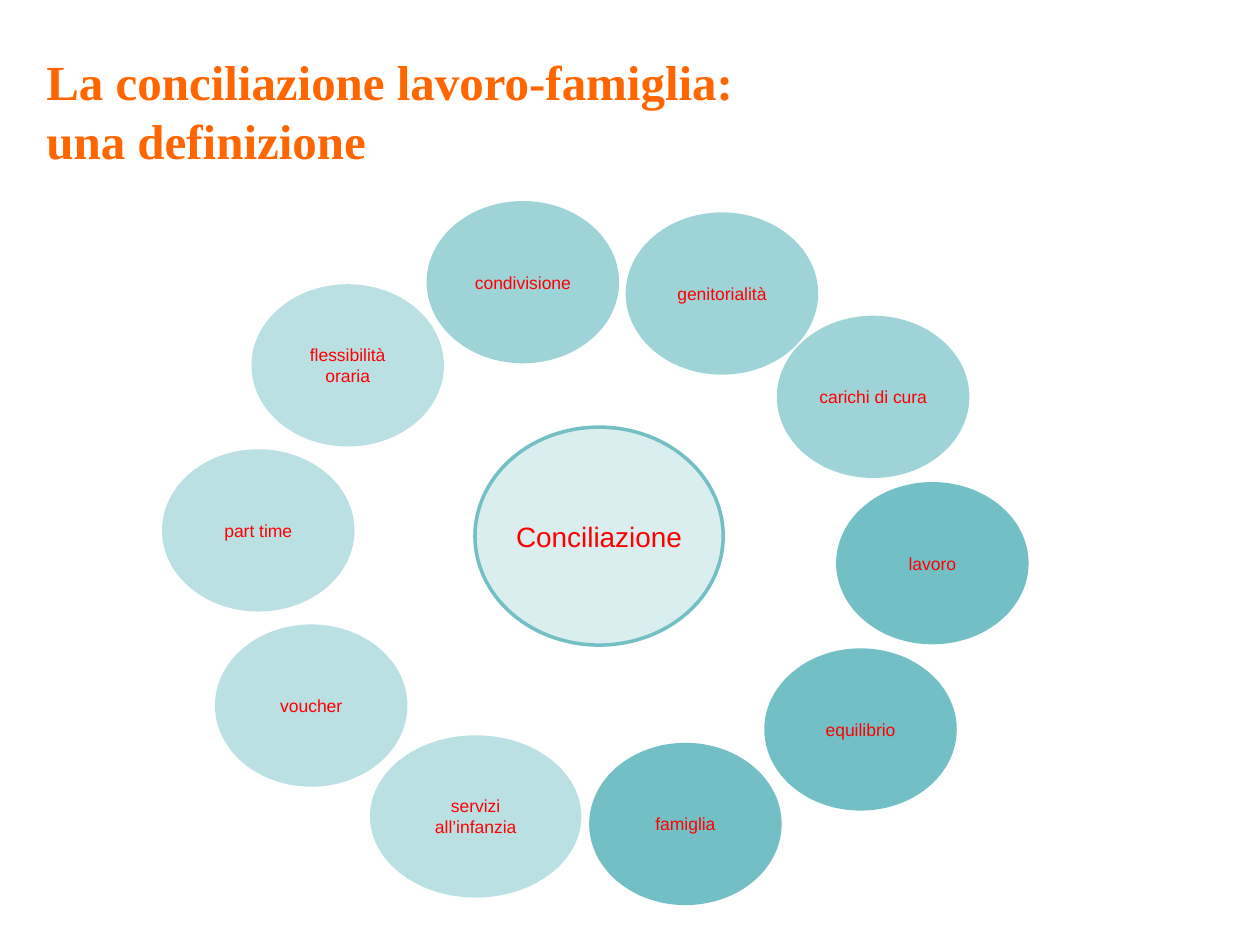
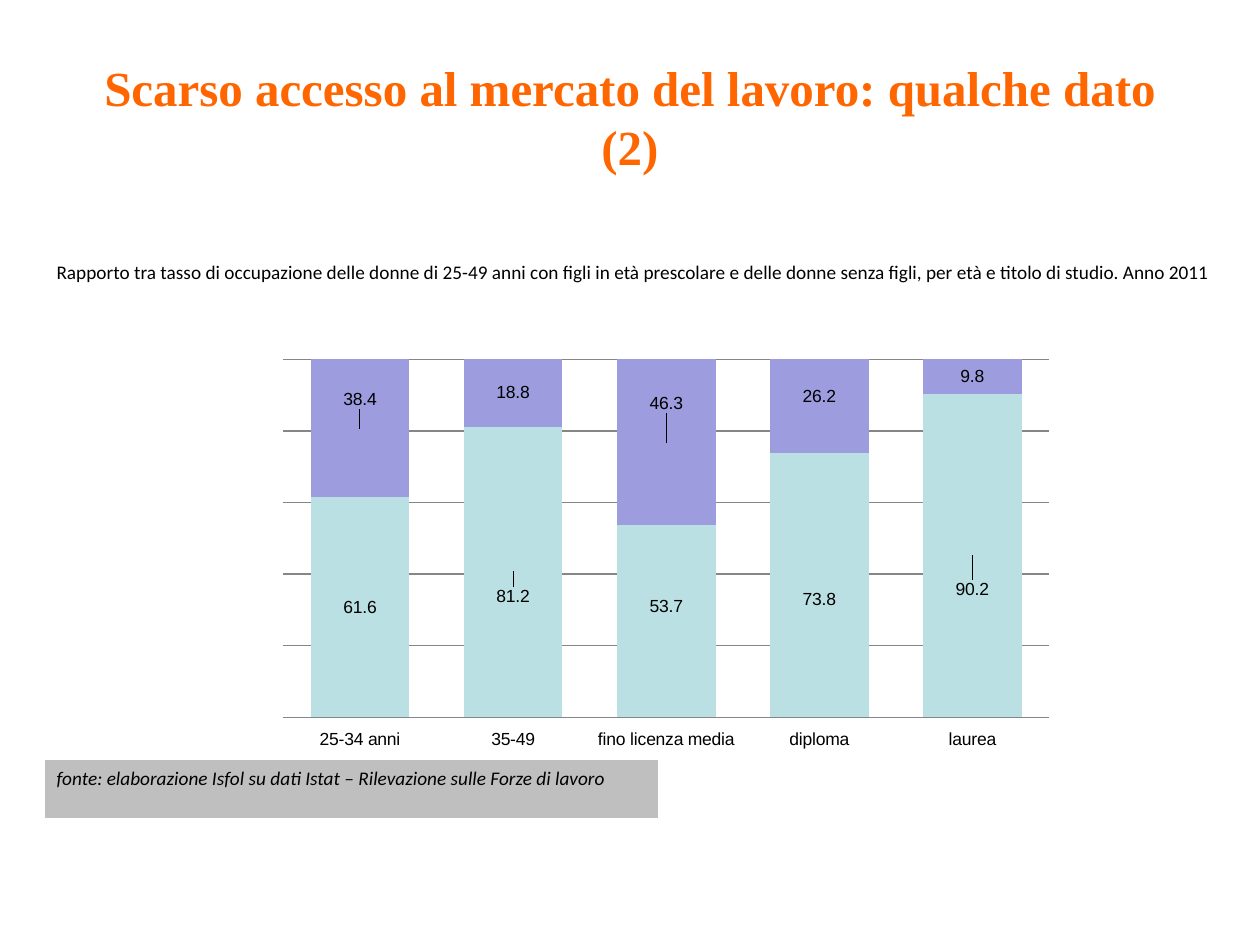
from lxml.etree import SubElement
from pptx import Presentation
from pptx.chart.data import CategoryChartData
from pptx.dml.color import RGBColor
from pptx.enum.chart import XL_CHART_TYPE, XL_LABEL_POSITION, XL_TICK_LABEL_POSITION, XL_TICK_MARK
from pptx.enum.shapes import MSO_SHAPE
from pptx.enum.text import MSO_ANCHOR, PP_ALIGN
from pptx.oxml.ns import qn
from pptx.util import Inches, Pt

ORANGE, RED, BLACK, WHITE = "FF6600", "FF0000", "000000", "FFFFFF"
PALE, LIGHT, MID, TEAL = "DAEDEF", "BBE0E3", "9ED3D7", "72BFC5"
LILAC, GRAY, GRID = "9C9CDF", "BFBFBF", "868686"

BUBBLES = {
    MID: [("condivisione", 3.4, 1.61), ("genitorialità", 4.98, 1.7),
          ("carichi di cura", 6.18, 2.52)],
    TEAL: [("lavoro", 6.65, 3.84), ("equilibrio", 6.08, 5.16),
           ("famiglia", 4.69, 5.91)],
    LIGHT: [("servizi\nall’infanzia", 2.95, 5.85, 1.65), ("voucher", 1.72, 4.97),
            ("part time", 1.3, 3.58), ("flessibilità\noraria", 2.01, 2.27)],
}
GROUPS = ["25-34 anni", "35-49", "fino licenza media", "diploma", "laurea"]
RATES = [
    ("Series 1", LIGHT, [61.6, 81.2, 53.7, 73.8, 90.2], {1: 0.05, 2: -0.03, 3: 0.03, 4: 0.07}),
    ("Series 2", LILAC, [38.4, 18.8, 46.3, 26.2, 9.8], {0: -0.06, 2: -0.08, 3: -0.02}),
]


def color(code):
    return RGBColor.from_string(code)


def paint(fill, code):
    fill.solid()
    fill.fore_color.rgb = color(code)


def style(font, name, size, code, bold=False, italic=False):
    font.name, font.size = name, Pt(size)
    font.bold, font.italic = bold, italic
    font.color.rgb = color(code)


def write(frame, text, name, size, code, align=PP_ALIGN.LEFT, anchor=MSO_ANCHOR.MIDDLE,
          wrap=True, **look):
    frame.word_wrap = wrap
    frame.vertical_anchor = anchor
    for i, line in enumerate(text.split("\n")):
        para = frame.add_paragraph() if i else frame.paragraphs[0]
        para.alignment = align
        run = para.add_run()
        run.text = line
        style(run.font, name, size, code, **look)


def add_text(slide, box, text, *font, **look):
    frame = slide.shapes.add_textbox(*map(Inches, box)).text_frame
    write(frame, text, *font, **look)


def add_title(slide, box, text, align=PP_ALIGN.LEFT):
    add_text(slide, box, text, "Times New Roman", 28, ORANGE, align=align, bold=True)


def add_form(slide, kind, box, fill, line, width):
    form = slide.shapes.add_shape(kind, *map(Inches, box))
    form.shadow.inherit = False
    paint(form.fill, fill)
    form.line.color.rgb = color(line)
    form.line.width = Pt(width)
    return form


def add_bubble(slide, box, text, fill, line, size=10):
    form = add_form(slide, MSO_SHAPE.OVAL, box, fill, line, 2)
    write(form.text_frame, text, "Arial", size, RED, align=PP_ALIGN.CENTER, wrap=False)


def add_layout(parent, index, **spots):
    layout = SubElement(parent, qn("c:layout"))
    manual = SubElement(layout, qn("c:manualLayout"))
    for tag, value in spots.items():
        SubElement(manual, qn("c:" + tag)).set("val", str(value))
    parent.insert(index, layout)


def set_plot(chart):
    area = chart._chartSpace.find(".//" + qn("c:plotArea"))
    for old in area.findall(qn("c:layout")):
        area.remove(old)
    add_layout(area, 0, layoutTarget="inner", xMode="edge", yMode="edge",
               x=0.05, y=0.17, w=0.95, h=0.74)


def set_axes(chart):
    ages, scale = chart.category_axis, chart.value_axis
    ages.major_tick_mark = XL_TICK_MARK.NONE
    ages.tick_label_position = XL_TICK_LABEL_POSITION.LOW
    ages.has_major_gridlines = False
    scale.visible = False
    scale.minimum_scale, scale.maximum_scale, scale.major_unit = 0, 100, 20
    scale.has_major_gridlines = True
    for line in (ages.format.line, scale.major_gridlines.format.line):
        line.color.rgb = color(GRID)
        line.width = Pt(0.75)


def set_series(series, code, shifts):
    paint(series.format.fill, code)
    labels = series.data_labels
    labels.show_value = True
    labels.position = XL_LABEL_POSITION.CENTER
    style(labels.font, "Arial", 10, BLACK)
    for i, shift in shifts.items():
        series.points[i].data_label.position = XL_LABEL_POSITION.CENTER
    for label in series._element.iter(qn("c:dLbl")):
        index = int(label.find(qn("c:idx")).get("val"))
        add_layout(label, 1, x=0, y=shifts[index])


def add_bars(slide, box):
    data = CategoryChartData()
    data.categories = GROUPS
    for name, code, rates, shifts in RATES:
        data.add_series(name, rates)
    frame = slide.shapes.add_chart(XL_CHART_TYPE.COLUMN_STACKED, *map(Inches, box), data)
    chart = frame.chart
    chart.has_title = chart.has_legend = False
    style(chart.font, "Arial", 10, BLACK)
    plot = chart.plots[0]
    plot.gap_width, plot.overlap = 55, 100
    plot.vary_by_categories = False
    for series, (name, code, rates, shifts) in zip(plot.series, RATES):
        set_series(series, code, shifts)
    set_axes(chart)
    set_plot(chart)


def draw_wheel(slide):
    add_title(slide, (0.27, 0.36, 7.13, 1.04),
              "La conciliazione lavoro-famiglia:\nuna definizione")
    add_bubble(slide, (3.77, 3.39, 1.97, 1.73), "Conciliazione", PALE, TEAL, 16)
    for code, group in BUBBLES.items():
        for text, left, top, *wide in group:
            width = wide[0] if wide else 1.5
            add_bubble(slide, (left, top, width, 1.26), text, code, code)


def draw_rates(slide):
    add_title(slide, (0.5, 0.3, 9, 1.25),
              "Scarso accesso al mercato del lavoro: qualche dato (2)", PP_ALIGN.CENTER)
    add_bars(slide, (1.93, 2.2, 6.4, 3.84))
    note = add_form(slide, MSO_SHAPE.RECTANGLE, (0.35, 6.03, 4.88, 0.47), GRAY, WHITE, 0.75)
    write(note.text_frame,
          "fonte: elaborazione Isfol su dati Istat – Rilevazione sulle Forze di lavoro",
          "Calibri", 11, BLACK, anchor=MSO_ANCHOR.TOP, italic=True)
    add_text(slide, (0.35, 2.01, 9.42, 0.3),
             "Rapporto tra tasso di occupazione delle donne di 25-49 anni con figli in età "
             "prescolare e delle donne senza figli, per età e titolo di studio. Anno 2011",
             "Calibri", 11, BLACK, wrap=False)


def main():
    deck = Presentation()
    deck.slide_width, deck.slide_height = Inches(10), Inches(7.5)
    for draw in (draw_wheel, draw_rates):
        draw(deck.slides.add_slide(deck.slide_layouts[6]))
    deck.save("out.pptx")


if __name__ == "__main__":
    main()
